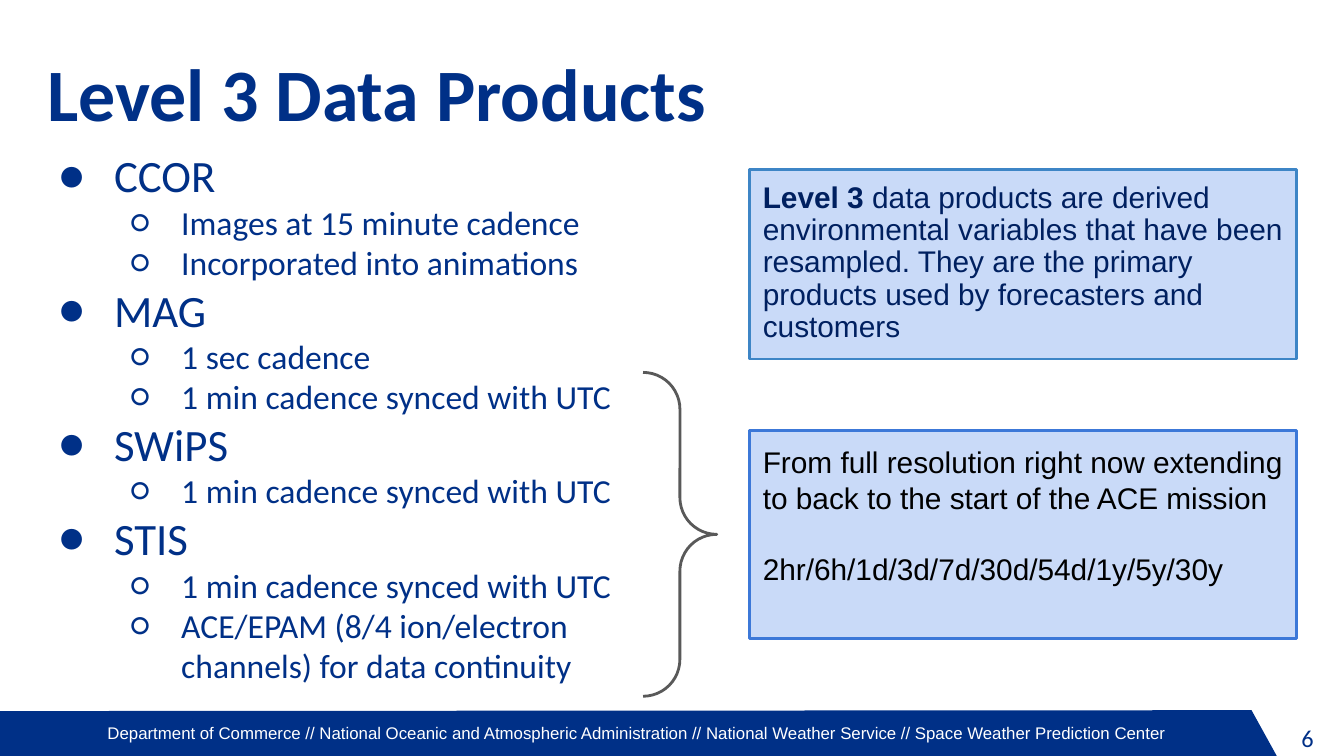
import pptx
import pptx.util
import pptx.dml.color
import pptx.enum.shapes
import pptx.enum.text
import pptx.oxml.ns
import lxml.etree

Pt = pptx.util.Pt
ANCHOR = pptx.enum.text.MSO_ANCHOR
ALIGN = pptx.enum.text.PP_ALIGN
SHAPE = pptx.enum.shapes.MSO_SHAPE

THEME = {
    "navy": "003087", "ink": "002060", "black": "000000", "white": "FFFFFF",
    "panel": "C9DAF8", "definition_edge": "3D85C6", "history_edge": "3C78D8",
    "brace": "595959", "head_font": "Calibri", "note_font": "Arial",
    "title": 39.6, "product": 24, "detail": 18, "note": 16, "number": 13, "footer": 9,
    "edge": 1.5, "inset": 7.2,
}

TITLE = "Level 3 Data Products"
PRODUCTS = [
    ("CCOR", ["Images at 15 minute cadence", "Incorporated into animations"]),
    ("MAG", ["1 sec cadence", "1 min cadence synced with UTC"]),
    ("SWiPS", ["1 min cadence synced with UTC"]),
    ("STIS", ["1 min cadence synced with UTC",
              "ACE/EPAM (8/4 ion/electron channels) for data continuity"]),
]
DEFINITION = [
    ("Level 3 ", True),
    ("data products are derived environmental variables that have been resampled. "
     "They are the primary products used by forecasters and customers", False),
]
HISTORY = "From full resolution right now extending to back to the start of the ACE mission"
RANGES = "2hr/6h/1d/3d/7d/30d/54d/1y/5y/30y"
FOOTER = ("Department of Commerce // National Oceanic and Atmospheric Administration // "
          "National Weather Service // Space Weather Prediction Center")
PAGE_NUMBER = "6"

WIDTH, HEIGHT = 720, 405
MARGIN = 18
BANNER_TOP = 380.5
PANEL_LEFT, PANEL_WIDTH = 401.6, 293
LEVELS = [
    {"bullet": "●", "left": 36, "hang": 30, "size": THEME["product"]},
    {"bullet": "○", "left": 72, "hang": 27, "size": THEME["detail"]},
]


def rgb(name):
    return pptx.dml.color.RGBColor.from_string(THEME[name])


def prepare_frame(shape, anchor=ANCHOR.TOP, insets=(THEME["inset"],) * 4):
    frame = shape.text_frame
    frame.auto_size = pptx.enum.text.MSO_AUTO_SIZE.NONE
    frame.word_wrap = True
    frame.vertical_anchor = anchor
    frame.margin_left, frame.margin_top, frame.margin_right, frame.margin_bottom = map(Pt, insets)
    return frame


def add_bullet(paragraph, level):
    style = LEVELS[level]
    paragraph.level = level
    properties = paragraph._p.get_or_add_pPr()
    properties.set("marL", str(Pt(style["left"])))
    properties.set("indent", str(-Pt(style["hang"])))
    qn = pptx.oxml.ns.qn
    colour = lxml.etree.SubElement(properties, qn("a:buClr"))
    lxml.etree.SubElement(colour, qn("a:srgbClr"), val=THEME["navy"])
    lxml.etree.SubElement(properties, qn("a:buFont"), typeface=THEME["head_font"])
    lxml.etree.SubElement(properties, qn("a:buChar"), char=style["bullet"])


def write(frame, text, size, colour="navy", font="head_font", bold=False,
          align=ALIGN.LEFT, level=None, spacing=None, before=None):
    paragraph = frame.paragraphs[0]
    if paragraph.runs:
        paragraph = frame.add_paragraph()
    if level is not None:
        add_bullet(paragraph, level)
    paragraph.alignment = align
    if spacing:
        paragraph.line_spacing = spacing
    if before is not None:
        paragraph.space_before = Pt(before)
    pieces = [(text, bold)] if isinstance(text, str) else text
    for words, heavy in pieces:
        run = paragraph.add_run()
        run.text = words
        run.font.size = Pt(size)
        run.font.name = THEME[font]
        run.font.bold = heavy
        run.font.color.rgb = rgb(colour)


def paint(shape, fill=None, edge=None):
    shape.shadow.inherit = False
    if fill:
        shape.fill.solid()
        shape.fill.fore_color.rgb = rgb(fill)
    else:
        shape.fill.background()
    if edge:
        shape.line.color.rgb = rgb(edge)
        shape.line.width = Pt(THEME["edge"])
    else:
        shape.line.fill.background()


def add_panel(shapes, top, height, edge):
    panel = shapes.add_shape(SHAPE.RECTANGLE, Pt(PANEL_LEFT), Pt(top), Pt(PANEL_WIDTH), Pt(height))
    paint(panel, "panel", edge)
    return prepare_frame(panel)


def main():
    deck = pptx.Presentation()
    deck.slide_width, deck.slide_height = Pt(WIDTH), Pt(HEIGHT)
    slide = deck.slides.add_slide(deck.slide_layouts[5])
    shapes = slide.shapes

    title = shapes.title
    title.left, title.top = Pt(MARGIN), Pt(26)
    title.width, title.height = Pt(WIDTH - 2 * MARGIN), Pt(46)
    write(prepare_frame(title, ANCHOR.MIDDLE), TITLE, THEME["title"], bold=True)

    outline = shapes.build_freeform(Pt(0), Pt(BANNER_TOP + 0.5))
    outline.add_line_segments(
        [(Pt(x), Pt(y)) for x, y in [(670.5, BANNER_TOP), (684, HEIGHT), (0, HEIGHT)]], close=True)
    banner = outline.convert_to_shape()
    paint(banner, "navy")
    write(prepare_frame(banner, ANCHOR.MIDDLE, (57.6, 0, 7.2, 0)), FOOTER, THEME["footer"],
          colour="white", font="note_font")

    product_list = prepare_frame(shapes.add_textbox(Pt(MARGIN), Pt(72), Pt(342), Pt(295)))
    for product, details in PRODUCTS:
        for level, text in [(0, product)] + [(1, detail) for detail in details]:
            write(product_list, text, LEVELS[level]["size"], level=level)

    number = shapes.add_textbox(Pt(682.5), Pt(BANNER_TOP), Pt(36), Pt(HEIGHT - BANNER_TOP))
    write(prepare_frame(number), PAGE_NUMBER, THEME["number"], align=ALIGN.CENTER)

    history = add_panel(shapes, 230.5, 111.5, "history_edge")
    write(history, HISTORY, THEME["note"], colour="black", font="note_font")
    write(history, RANGES, THEME["note"], colour="black", font="note_font", before=19)

    brace = shapes.add_shape(SHAPE.RIGHT_BRACE, Pt(344.5), Pt(199.5), Pt(39.5), Pt(173.5))
    brace.adjustments[0] = brace.adjustments[1] = 0.5
    paint(brace, edge="brace")

    definition = add_panel(shapes, 90.7, 101.7, "definition_edge")
    write(definition, DEFINITION, THEME["note"], colour="ink", font="note_font", spacing=0.9)

    deck.save("out.pptx")


if __name__ == "__main__":
    main()
